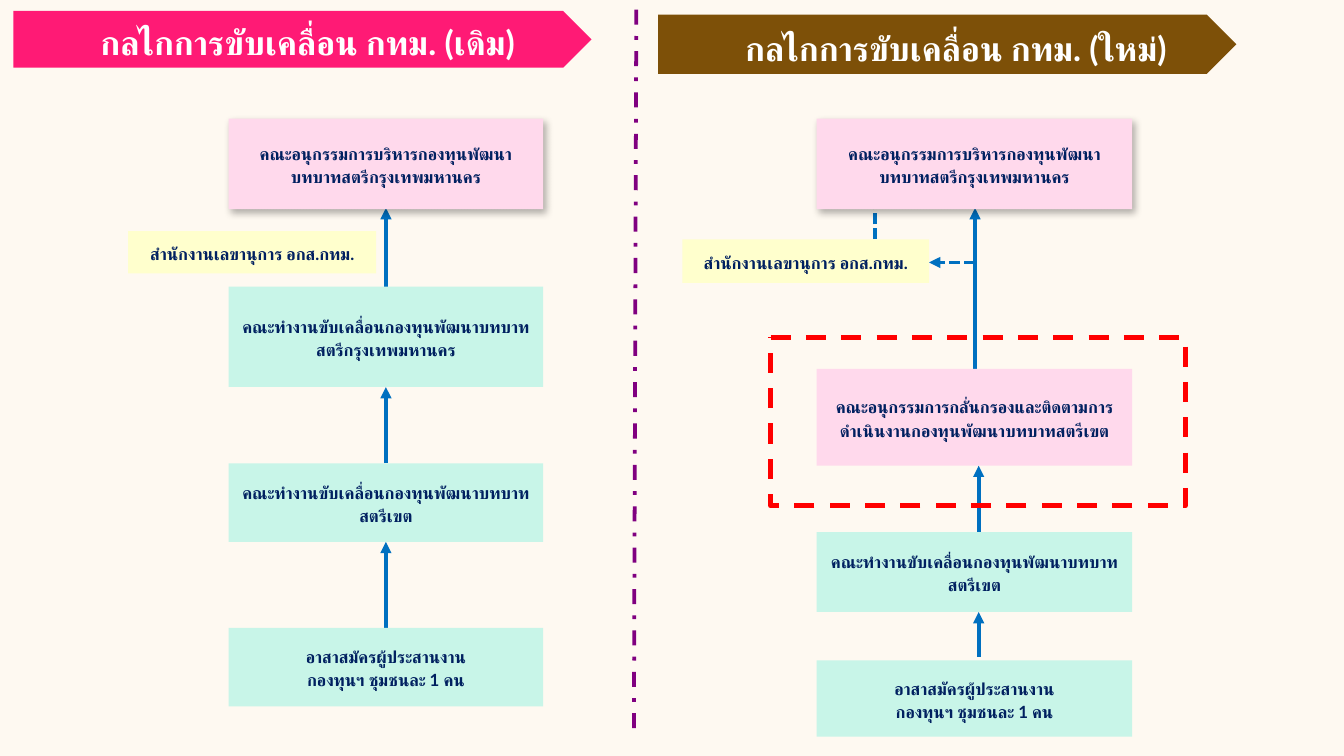
from pptx import Presentation
from pptx.dml.color import RGBColor
from pptx.enum.dml import MSO_LINE
from pptx.enum.shapes import MSO_CONNECTOR, MSO_SHAPE
from pptx.enum.text import MSO_ANCHOR, PP_ALIGN
from pptx.oxml import parse_xml
from pptx.oxml.ns import nsdecls, qn
from pptx.util import Inches, Pt

STRAIGHT = MSO_CONNECTOR.STRAIGHT
RECTANGLE, PENTAGON = MSO_SHAPE.RECTANGLE, MSO_SHAPE.PENTAGON
PROCESS = MSO_SHAPE.FLOWCHART_PROCESS
SHORT_DASH, DASH, DASH_DOT = MSO_LINE.SQUARE_DOT, MSO_LINE.DASH, MSO_LINE.DASH_DOT
MIDDLE, BOTTOM = MSO_ANCHOR.MIDDLE, MSO_ANCHOR.BOTTOM
LEFT, CENTER = PP_ALIGN.LEFT, PP_ALIGN.CENTER

FONT = "Lato"
PINK, MINT, YELLOW = "FFD9EC", "C8F5E8", "FFFFCD"
NAVY, BLUE, RED, PURPLE, WHITE = "002060", "0070C0", "FF0000", "800080", "FFFFFF"

COMMITTEE = "คณะอนุกรรมการบริหารกองทุนพัฒนาบทบาทสตรีกรุงเทพมหานคร"
SECRETARIAT = "สำนักงานเลขานุการ อกส.กทม."
CITY_TEAM = "คณะทำงานขับเคลื่อนกองทุนพัฒนาบทบาทสตรีกรุงเทพมหานคร"
SCREENING = "คณะอนุกรรมการกลั่นกรองและติดตามการดำเนินงานกองทุนพัฒนาบทบาทสตรีเขต"
DISTRICT_TEAM = "คณะทำงานขับเคลื่อนกองทุนพัฒนาบทบาทสตรีเขต"
VOLUNTEERS = "อาสาสมัครผู้ประสานงาน\vกองทุนฯ ชุมชนละ 1 คน"


def color(value):
    """Turn a hex string into a colour."""
    return RGBColor.from_string(value)


def write(shape, text, size, ink, align, anchor):
    """Put bold text into a shape."""
    frame = shape.text_frame
    frame.word_wrap = True
    frame.vertical_anchor = anchor
    frame.paragraphs[0].text = text
    para = frame.paragraphs[0]
    para.alignment = align
    for span in para.runs:
        span.font.size = Pt(size)
        span.font.bold = True
        span.font.name = FONT
        span.font.color.rgb = color(ink)
        script_font = span.font._element.makeelement(qn("a:cs"), {"typeface": FONT})
        span.font._element.append(script_font)
    return para


def add_block(page, kind, left, top, width, height, fill):
    """Add a filled shape without outline or shadow."""
    shape = page.shapes.add_shape(
        kind, Inches(left), Inches(top), Inches(width), Inches(height))
    shape.shadow.inherit = False
    shape.fill.solid()
    shape.fill.fore_color.rgb = color(fill)
    shape.line.fill.background()
    return shape


def add_box(page, left, top, width, height, fill, text, space_before=0):
    """Add a labelled organisation box."""
    box = add_block(page, RECTANGLE, left, top, width, height, fill)
    frame = box.text_frame
    frame.margin_left = frame.margin_right = Inches(0.08)
    frame.margin_top = frame.margin_bottom = Inches(0.04)
    para = write(box, text, 10, NAVY, CENTER, MIDDLE)
    para.line_spacing = 1.15
    para.space_before = Pt(space_before)
    para.space_after = Pt(8.3)
    return box


def add_committee(page, left, top, width):
    """Add the shadowed committee box at the top of a chain."""
    box = add_box(page, left, top, width, 0.75, PINK, COMMITTEE)
    effects = box._element.spPr.find(qn("a:effectLst"))
    effects.append(parse_xml(
        f'<a:outerShdw {nsdecls("a")} blurRad="57150" dist="33020" dir="3180000" '
        'algn="ctr" rotWithShape="0"><a:srgbClr val="000000">'
        '<a:alpha val="30000"/></a:srgbClr></a:outerShdw>'))


def add_line(page, start, end, ink=BLUE, dash=None, arrow=True):
    """Add a straight line, with an arrowhead at its end if wanted."""
    line = page.shapes.add_connector(STRAIGHT, *map(Inches, start + end))
    line.line.color.rgb = color(ink)
    line.line.width = Pt(2.25)
    if dash:
        line.line.dash_style = dash
    if arrow:
        line.line._get_or_add_ln().append(
            parse_xml(f'<a:tailEnd {nsdecls("a")} type="triangle"/>'))
    line._element.spPr.append(parse_xml(f'<a:effectLst {nsdecls("a")}/>'))


def add_header(page, left, top, height, fill, text):
    """Add the arrow-shaped heading of a panel."""
    header = add_block(page, PENTAGON, left, top, 4.78, height, fill)
    header.text_frame.margin_left = Inches(0.72)
    write(header, text, 20, WHITE, LEFT, BOTTOM)


def add_old_panel(page, left, top):
    """Draw the former chain from volunteers up to the committee."""
    box_left, width = left + 1.78, 2.6
    middle = box_left + width / 2
    add_header(page, left, top, 0.47, "FF1A75", "กลไกการขับเคลื่อน กทม. (เดิม)")
    for start, end in ((2.28, 1.63), (3.74, 3.11), (5.1, 4.39)):
        add_line(page, (middle, top + start), (middle, top + end))
    add_committee(page, box_left, top + 0.89, width)
    add_box(page, left + 0.95, top + 1.82, 2.05, 0.35, YELLOW, SECRETARIAT, 5)
    for offset, height, text in ((2.28, 0.83, CITY_TEAM), (3.74, 0.65, DISTRICT_TEAM),
                                 (5.1, 0.65, VOLUNTEERS)):
        add_box(page, box_left, top + offset, width, height, MINT, text)


def add_new_panel(page, left, top):
    """Draw the new chain with its framed screening committee."""
    box_left, width = left + 1.31, 2.61
    middle = left + 2.65
    add_header(page, left, top, 0.49, "7D5008", "กลไกการขับเคลื่อน กทม. (ใหม่)")
    add_line(page, (left + 2.62, top + 2.93), (left + 2.62, top + 1.6))
    add_line(page, (left + 2.62, top + 2.05), (left + 2.24, top + 2.05), dash=SHORT_DASH)
    add_line(page, (left + 1.79, top + 1.86), (left + 1.79, top + 1.5), dash=SHORT_DASH)
    for start, end in ((4.28, 3.73), (5.31, 4.94)):
        add_line(page, (middle, top + start), (middle, top + end))
    add_committee(page, box_left, top + 0.86, width)
    for offset, height, fill, text in ((2.93, 0.8, PINK, SCREENING),
                                       (4.28, 0.66, MINT, DISTRICT_TEAM),
                                       (5.34, 0.63, MINT, VOLUNTEERS)):
        add_box(page, box_left, top + offset, width, height, fill, text)
    frame = add_block(page, PROCESS, left + 0.93, top + 2.67, 3.43, 1.39, WHITE)
    frame.fill.background()
    frame.line.color.rgb = color(RED)
    frame.line.width = Pt(3)
    frame.line.dash_style = DASH
    add_box(page, left + 0.2, top + 1.86, 2.04, 0.36, YELLOW, SECRETARIAT, 5)


def main():
    """Build and save the deck."""
    deck = Presentation()
    deck.slide_width, deck.slide_height = Inches(11.11), Inches(6.25)
    page = deck.slides.add_slide(deck.slide_layouts[6])
    page.background.fill.solid()
    page.background.fill.fore_color.rgb = color("FEF9F1")
    add_old_panel(page, 0.11, 0.09)
    add_line(page, (5.26, 0.08), (5.24, 6.09), PURPLE, DASH_DOT, arrow=False)
    add_new_panel(page, 5.44, 0.12)
    deck.save("out.pptx")


if __name__ == "__main__":
    main()
